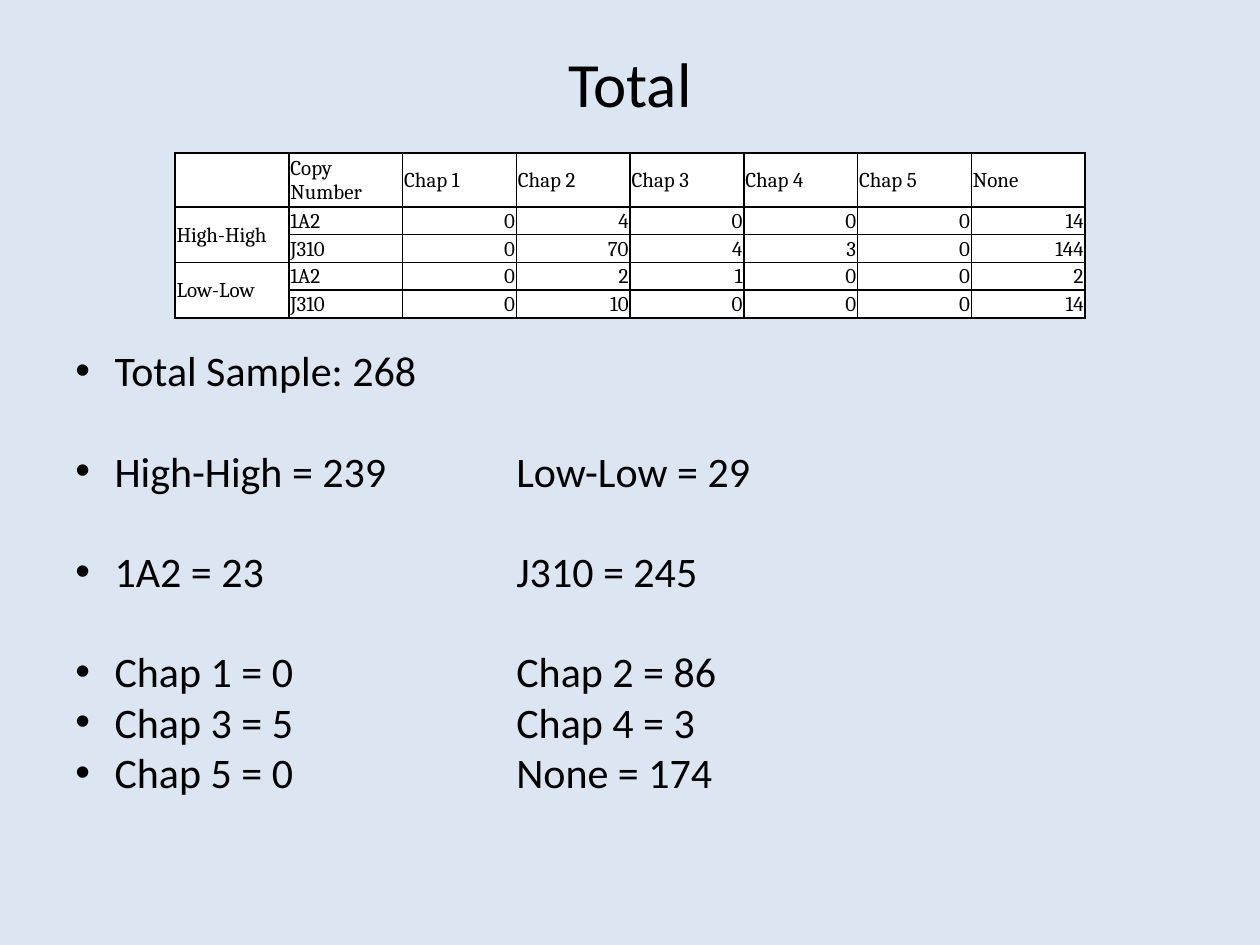
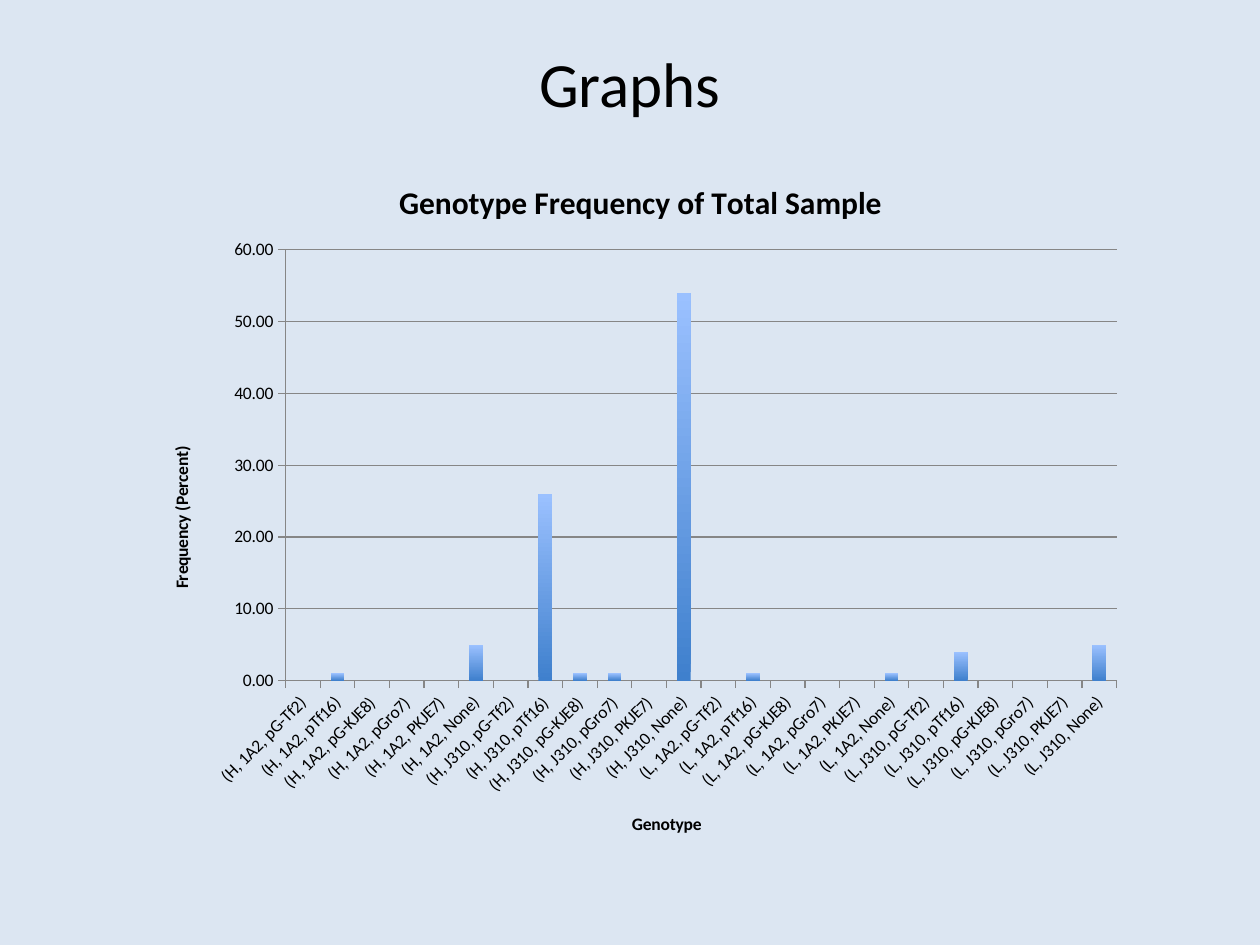
from itertools import product

from lxml.etree import SubElement
from pptx import Presentation
from pptx.chart.data import CategoryChartData
from pptx.dml.color import RGBColor
from pptx.enum.chart import XL_CHART_TYPE, XL_TICK_MARK
from pptx.enum.text import MSO_ANCHOR, PP_ALIGN
from pptx.oxml import parse_xml
from pptx.oxml.ns import nsdecls, qn
from pptx.util import Cm, Pt

# Shared style
BACKGROUND, INK, PAPER, AXIS_GRAY = "DCE6F2", "000000", "FFFFFF", "868686"
BAR_TOP, BAR_BOTTOM = "9BC1FF", "3F80CD"
BODY_FONT, TABLE_FONT = "Calibri", "Cambria"

# Sample counts, one row per strain and copy number
HEADINGS = ["", "Copy Number", "Chap 1", "Chap 2", "Chap 3", "Chap 4", "Chap 5", "None"]
COUNTS = [
    ["High-High", "1A2", 0, 4, 0, 0, 0, 14],
    ["", "J310", 0, 70, 4, 3, 0, 144],
    ["Low-Low", "1A2", 0, 2, 1, 0, 0, 2],
    ["", "J310", 0, 10, 0, 0, 0, 14],
]
PLASMIDS = ["pG-Tf2", "pTf16", "pG-KJE8", "pGro7", "PKJE7", "None"]

# Summary lines: left text, right text, space after in points
SUMMARY = [
    ("Total Sample: 268", "", 28.5),
    ("High-High = 239", "Low-Low = 29", 28.5),
    ("1A2 = 23", "J310 = 245", 28.5),
    ("Chap 1 = 0", "Chap 2 = 86", 0),
    ("Chap 3 = 5", "Chap 4 = 3", 0),
    ("Chap 5 = 0", "None = 174", 0),
]


def color(value):
    return RGBColor.from_string(value)


def style_font(font, size, name=BODY_FONT, bold=False):
    font.size, font.name, font.bold = Pt(size), name, bold
    font.color.rgb = color(INK)


def add_page(deck, title):
    page = deck.slides.add_slide(deck.slide_layouts[6])
    page.background.fill.solid()
    page.background.fill.fore_color.rgb = color(BACKGROUND)
    frame = add_text_box(page, Cm(1.27), Cm(0.76), Cm(22.86), Cm(1.78))
    frame.vertical_anchor = MSO_ANCHOR.MIDDLE
    para = frame.paragraphs[0]
    para.text = title
    para.alignment = PP_ALIGN.CENTER
    style_font(para.runs[0].font, 36)
    return page


def add_text_box(page, left, top, width, height):
    frame = page.shapes.add_textbox(left, top, width, height).text_frame
    frame.word_wrap = True
    return frame


def style_cell(cell, value):
    properties = cell._tc.get_or_add_tcPr()
    for side in ("L", "R", "T", "B"):
        properties.append(parse_xml(
            f'<a:ln{side} {nsdecls("a")} w="12700"><a:solidFill>'
            f'<a:srgbClr val="{INK}"/></a:solidFill></a:ln{side}>'))
    cell.fill.solid()
    cell.fill.fore_color.rgb = color(PAPER)
    cell.margin_left = cell.margin_right = cell.margin_top = Cm(0.03)
    cell.margin_bottom = 0
    cell.vertical_anchor = MSO_ANCHOR.MIDDLE
    para = cell.text_frame.paragraphs[0]
    para.text = str(value)
    para.alignment = PP_ALIGN.RIGHT if isinstance(value, int) else PP_ALIGN.LEFT
    style_font(para.font, 12, TABLE_FONT)
    for span in para.runs:
        style_font(span.font, 12, TABLE_FONT)


def add_count_table(page):
    rows = [HEADINGS] + COUNTS
    width = Cm(18.35)
    table = page.shapes.add_table(len(rows), len(HEADINGS), Cm(3.53), Cm(3.08),
                                  width, Cm(3.35)).table
    table.first_row = table.horz_banding = False
    for column in table.columns:
        column.width = width // len(HEADINGS)
    for index, values in enumerate(rows):
        table.rows[index].height = Cm(0.56 if index else 1.09)
        for position, value in enumerate(values):
            style_cell(table.cell(index, position), value)
    for first in (1, 3):
        table.cell(first, 0).merge(table.cell(first + 1, 0))


def add_summary(page):
    frame = add_text_box(page, Cm(1.27), Cm(6.83), Cm(22.43), Cm(9.5))
    for index, (left, right, gap) in enumerate(SUMMARY):
        para = frame.add_paragraph() if index else frame.paragraphs[0]
        para.text = f"{left}\t{right}" if right else left
        para.space_after = Pt(gap)
        for span in para.runs:
            style_font(span.font, 24)
        # Hanging bullet and a tab stop for the second column
        properties = para._p.get_or_add_pPr()
        properties.set("marL", str(Cm(0.79)))
        properties.set("indent", str(-Cm(0.79)))
        SubElement(properties, qn("a:buFont"), typeface="Arial")
        SubElement(properties, qn("a:buChar"), char="•")
        stops = SubElement(properties, qn("a:tabLst"))
        SubElement(stops, qn("a:tab"), pos=str(Cm(8.89)), algn="l")


def genotype_data():
    total = sum(sum(row[2:]) for row in COUNTS)
    data = CategoryChartData(number_format="0.00")
    data.categories = [f"({', '.join(parts)})"
                       for parts in product("HL", ("1A2", "J310"), PLASMIDS)]
    data.add_series("Frequency", [round(100 * count / total)
                                  for row in COUNTS for count in row[2:]])
    return data


def set_title(owner, text, size):
    frame = owner.text_frame
    frame.text = text
    style_font(frame.paragraphs[0].runs[0].font, size, bold=True)


def style_axis(axis, title):
    set_title(axis.axis_title, title, 10)
    axis.major_tick_mark = XL_TICK_MARK.OUTSIDE
    axis.minor_tick_mark = XL_TICK_MARK.NONE
    style_line(axis.format.line)
    style_font(axis.tick_labels.font, 10)


def style_line(line):
    line.color.rgb = color(AXIS_GRAY)
    line.width = Pt(0.75)


def place_plot(chart, left, top, width, height):
    area = chart._chartSpace.chart.plotArea
    for old in area.findall(qn("c:layout")):
        area.remove(old)
    layout = parse_xml(
        f'<c:layout {nsdecls("c")}><c:manualLayout><c:layoutTarget val="inner"/>'
        '<c:xMode val="edge"/><c:yMode val="edge"/>'
        f'<c:x val="{left}"/><c:y val="{top}"/><c:w val="{width}"/><c:h val="{height}"/>'
        '</c:manualLayout></c:layout>')
    area.insert(0, layout)


def add_genotype_chart(page):
    chart = page.shapes.add_chart(XL_CHART_TYPE.COLUMN_CLUSTERED, Cm(2.92), Cm(3.1),
                                  Cm(19.99), Cm(14.22), genotype_data()).chart
    style_font(chart.font, 10)
    chart.has_legend = False
    chart.has_title = True
    set_title(chart.chart_title, "Genotype Frequency of Total Sample", 18)
    place_plot(chart, 0.142, 0.136, 0.838, 0.611)

    # Axes
    genotype, frequency = chart.category_axis, chart.value_axis
    style_axis(genotype, "Genotype")
    style_axis(frequency, "Frequency (Percent)")
    genotype._element.find(qn("c:txPr")).find(qn("a:bodyPr")).set("rot", "-2700000")
    frequency.minimum_scale, frequency.maximum_scale, frequency.major_unit = 0, 60, 10
    frequency.tick_labels.number_format = "0.00"
    frequency.tick_labels.number_format_is_linked = False
    style_line(frequency.major_gridlines.format.line)

    # Bars
    plot = chart.plots[0]
    plot.gap_width = 150
    plot.vary_by_categories = False
    fill = plot.series[0].format.fill
    fill.gradient()
    fill.gradient_angle = 90
    for stop, shade in zip(fill.gradient_stops, (BAR_BOTTOM, BAR_TOP)):
        stop.color.rgb = color(shade)


def main():
    deck = Presentation()
    deck.slide_width, deck.slide_height = Cm(25.4), Cm(19.05)

    page = add_page(deck, "Total")
    add_count_table(page)
    add_summary(page)

    page = add_page(deck, "Graphs")
    add_genotype_chart(page)

    deck.save("out.pptx")


if __name__ == "__main__":
    main()
